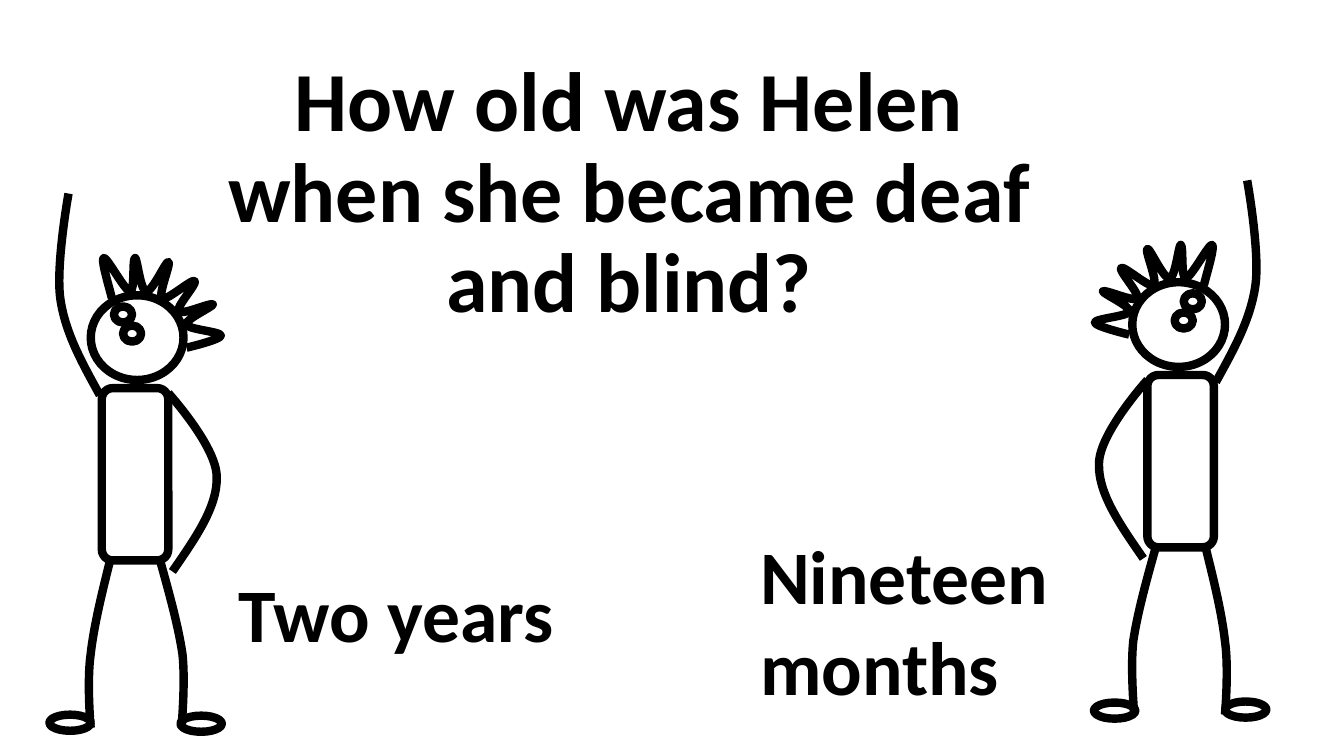
from dataclasses import dataclass
from math import cos, radians, sin

from pptx import Presentation, util as u
from pptx.dml.color import RGBColor
from pptx.enum import shapes, text
from pptx.oxml import ns, xmlchemy


@dataclass
class Theme:
    font: str = "Calibri"
    ink: RGBColor = RGBColor(0, 0, 0)
    title: int = 60
    answer: int = 54
    stroke: int = 6


# Places below are on an inch grid; every length becomes centimetres here
def cm(value):
    return u.Cm(2.54 * value)


def turn(x, y, angle):
    a = radians(angle)
    return x * cos(a) - y * sin(a), x * sin(a) + y * cos(a)


# Stick figure: (preset, left, top, width, height)
BODY = [("ROUNDED_RECTANGLE", 1.01, 3.85, 0.66, 1.71)]
FACE = [("OVAL", 0.49, 7.09, 0.41, 0.16), ("OVAL", 1.79, 7.1, 0.41, 0.16),
        ("OVAL", 0.9, 2.93, 0.92, 0.84)]
EYES = [("OVAL", 1.13, 3.04, 0.18, 0.16), ("OVAL", 1.22, 3.23, 0.18, 0.16)]

# Curves: (rotation, start point followed by triples of Bezier points)
LIMBS = [
    (0, [(1.09, 5.57), (1.01, 5.89), (0.93, 6.22), (0.9, 6.49),
         (0.86, 6.77), (0.9, 7.22), (0.9, 7.22)]),
    (0, [(1.59, 5.57), (1.68, 5.89), (1.77, 6.22), (1.81, 6.49),
         (1.84, 6.77), (1.8, 7.22), (1.8, 7.22)]),
    (-10.6, [(1.71, 5.67), (1.93, 5.35), (2.16, 5.03), (2.15, 4.73),
             (2.15, 4.43), (1.67, 3.9), (1.67, 3.9)]),
    (-4.5, [(0.99, 3.92), (0.82, 3.61), (0.65, 3.31), (0.6, 2.97),
            (0.55, 2.64), (0.68, 1.92), (0.68, 1.92)]),
]
HAIR = [(26.6, [
    (1.11, 2.96), (1.06, 2.77), (1, 2.57), (1.03, 2.56),
    (1.06, 2.55), (1.24, 2.89), (1.29, 2.89),
    (1.34, 2.89), (1.31, 2.56), (1.34, 2.56),
    (1.36, 2.56), (1.39, 2.88), (1.45, 2.89),
    (1.51, 2.9), (1.65, 2.58), (1.67, 2.6),
    (1.7, 2.61), (1.56, 2.93), (1.61, 2.96),
    (1.65, 2.99), (1.91, 2.76), (1.93, 2.79),
    (1.96, 2.81), (1.74, 3.05), (1.77, 3.09),
    (1.8, 3.13), (2.09, 3), (2.11, 3.02),
    (2.12, 3.04), (1.83, 3.17), (1.85, 3.22),
    (1.86, 3.27), (2.19, 3.29), (2.19, 3.33),
    (2.19, 3.37), (1.85, 3.45), (1.85, 3.45)])]


class Deck:
    def __init__(self, theme):
        self.theme = theme
        self.file = Presentation()
        self.file.slide_width, self.file.slide_height = cm(13.33), cm(7.5)
        self.slide = self.file.slides.add_slide(self.file.slide_layouts[5])

    def place(self, shape, box):
        for name, value in zip(("left", "top", "width", "height"), box):
            setattr(shape, name, cm(value))

    def letter(self, frame, lines, size, align, form):
        for name, value in form.items():
            setattr(frame, name, value)
        for i, line in enumerate(lines):
            par = frame.add_paragraph() if i else frame.paragraphs[0]
            par.alignment = align
            run = par.add_run()
            run.text = line
            look = {"name": self.theme.font, "size": u.Pt(size), "bold": True}
            for name, value in look.items():
                setattr(run.font, name, value)
            run.font.color.rgb = self.theme.ink

    def title(self, words, box):
        shape = self.slide.shapes.title
        self.place(shape, box)
        form = {"word_wrap": True, "auto_size": text.MSO_AUTO_SIZE.NONE,
                "vertical_anchor": text.MSO_ANCHOR.MIDDLE,
                "margin_left": cm(0.13), "margin_right": cm(0.13),
                "margin_top": cm(0.07), "margin_bottom": cm(0.07)}
        self.letter(shape.text_frame, [words], self.theme.title,
                    text.PP_ALIGN.CENTER, form)
        shape.text_frame.paragraphs[0].line_spacing = 0.9

    def answer(self, lines, box, align):
        shape = self.slide.shapes.add_textbox(*map(cm, box))
        form = {"word_wrap": False,
                "auto_size": text.MSO_AUTO_SIZE.SHAPE_TO_FIT_TEXT}
        self.letter(shape.text_frame, lines, self.theme.answer, align, form)

    def ink(self, shape):
        shape.shadow.inherit = False
        shape.fill.background()
        shape.line.color.rgb = self.theme.ink
        shape.line.width = u.Pt(self.theme.stroke)

    def preset(self, group, kind, box):
        kind = getattr(shapes.MSO_SHAPE, kind)
        self.ink(group.shapes.add_shape(kind, *map(cm, box)))

    def curve(self, group, points, angle):
        # Draw unturned, then rotate about the shape's own centre
        dots = [turn(cm(x), cm(y), -angle) for x, y in points]
        pen = group.shapes.build_freeform(*dots[0])
        pen.add_line_segments(dots[1:], close=False)
        shape = pen.convert_to_shape()
        wide, high = shape.width / 2, shape.height / 2
        x, y = turn(shape.left + wide, shape.top + high, angle)
        shape.left, shape.top = round(x - wide), round(y - high)
        shape.rotation = angle
        # Each three segments become one Bezier curve
        parts = list(shape._element.iter(ns.qn("a:lnTo")))
        for i in range(0, len(parts), 3):
            bend = xmlchemy.OxmlElement("a:cubicBezTo")
            parts[i].addprevious(bend)
            for part in parts[i:i + 3]:
                bend.append(part[0])
                part.getparent().remove(part)
        self.ink(shape)

    def figure(self, axis=None, lift=0):
        """Draw a figure; with axis, mirror it so that x becomes axis - x."""
        group = self.slide.shapes.add_group_shape()
        for forms, curves in ((BODY, LIMBS), (FACE, HAIR), (EYES, [])):
            for kind, x, y, wide, high in forms:
                left = axis - x - wide if axis else x
                self.preset(group, kind, (left, y - lift, wide, high))
            for angle, points in curves:
                spots = [(axis - x if axis else x, y - lift)
                         for x, y in points]
                self.curve(group, spots, -angle if axis else angle)

    def save(self):
        self.file.save("out.pptx")


def main():
    deck = Deck(Theme())
    # Question and answers
    deck.title("How old was Helen when she became deaf and blind?",
               (1.98, 0.75, 8.52, 2.37))
    deck.answer(["Two years"], (2.25, 5.57, 3.36, 1.01), text.PP_ALIGN.CENTER)
    deck.answer(["Nineteen", "months"], (7.44, 5.2, 3.09, 1.92),
                text.PP_ALIGN.LEFT)
    # Left figure and its mirror on the right
    deck.figure()
    deck.figure(axis=13.05, lift=0.13)
    deck.save()


if __name__ == "__main__":
    main()
